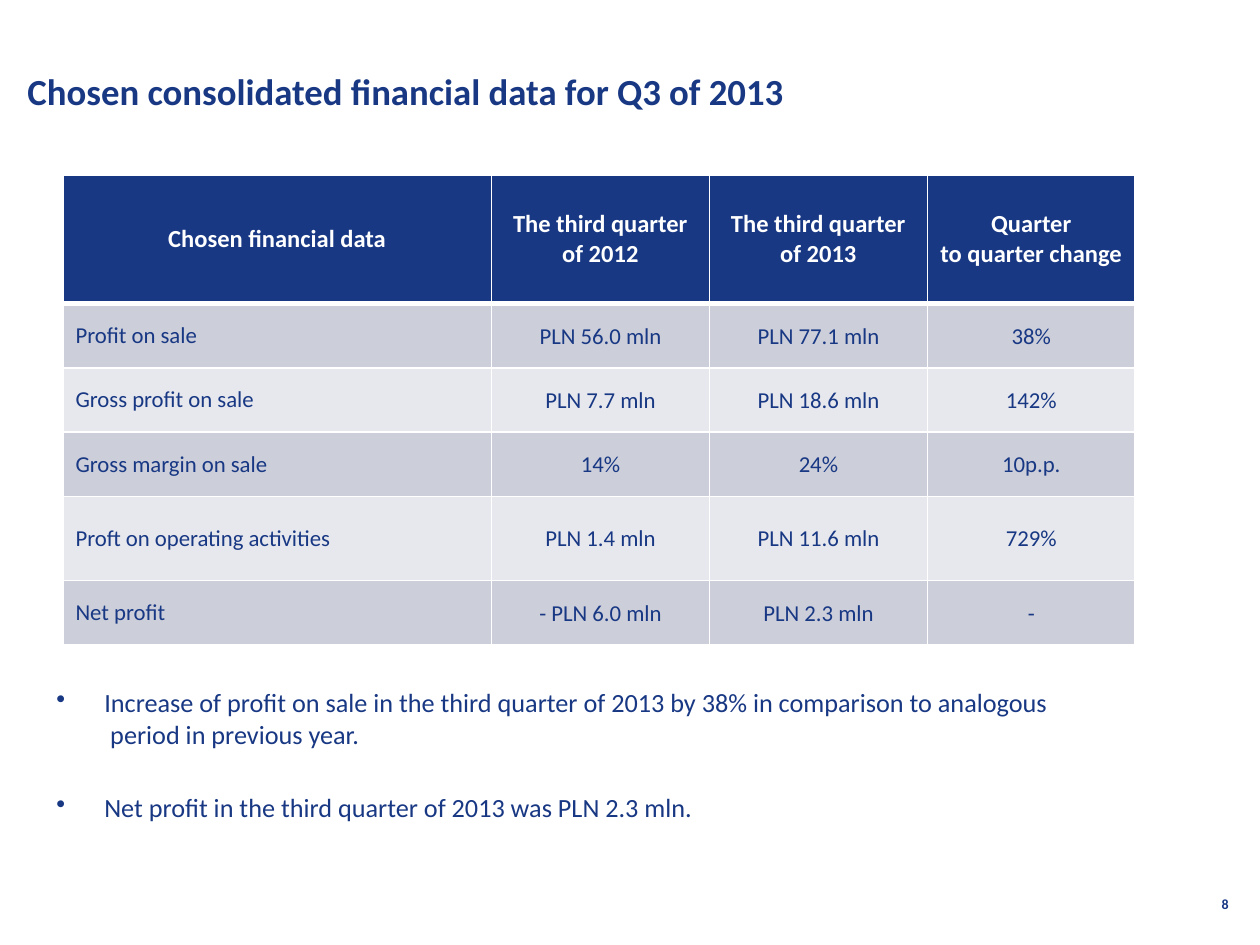
from dataclasses import dataclass

from pptx import Presentation
from pptx.dml.color import RGBColor
from pptx.enum.text import MSO_ANCHOR as Anchor, PP_ALIGN as Align
from pptx.oxml.ns import qn
from pptx.oxml.xmlchemy import OxmlElement as Element
from pptx.util import Inches, Pt


@dataclass(frozen=True)
class Theme:
    """Colours, font and type sizes of the slide."""
    font: str = "Calibri"
    navy: str = "183884"
    white: str = "FFFFFF"
    bands: tuple = ("CCCED9", "E7E8ED")
    title: int = 21
    bullet: int = 15
    header: int = 14
    body: int = 13
    number: int = 8


THEME = Theme()
COLUMNS = (3.4, 1.73, 1.73, 1.65)
ROW_HEIGHTS = (1.02, 0.51, 0.51, 0.51, 0.67, 0.51)
FINANCIALS = (
    ("Chosen financial data", "The third quarter of 2012",
     "The third quarter of 2013", "Quarter\vto quarter change"),
    ("Profit on sale", "PLN 56.0 mln", "PLN 77.1 mln", "38%"),
    ("Gross profit on sale", "PLN 7.7 mln", "PLN 18.6 mln", "142%"),
    ("Gross margin on sale", "14%", "24%", "10p.p."),
    ("Proft on operating activities", "PLN 1.4 mln", "PLN 11.6 mln", "729%"),
    ("Net profit", "- PLN 6.0 mln", "PLN 2.3 mln", "-"),
)
COMMENTS = (
    "Increase of profit on sale in the third quarter of 2013 by 38% "
    "in comparison to analogous\v period in previous year.",
    "Net profit in the third quarter of 2013 was PLN 2.3 mln.",
)


def write(paragraph, text, size, color=THEME.navy, bold=False, align=Align.LEFT):
    """Fill a paragraph and format its runs and line breaks."""
    paragraph.text = text
    paragraph.alignment = align
    for run in paragraph.runs:
        run.font.name = THEME.font
        run.font.size = Pt(size)
        run.font.bold = bold
        run.font.color.rgb = RGBColor.from_string(color)
    for line_break in paragraph._p.findall(qn("a:br")):
        properties = Element("a:rPr")
        properties.set("sz", str(size * 100))
        line_break.append(properties)


def add_frame(slide, box, anchor=Anchor.TOP):
    """Add a wrapping text box and return its text frame."""
    frame = slide.shapes.add_textbox(*map(Inches, box)).text_frame
    frame.word_wrap = True
    frame.vertical_anchor = anchor
    return frame


def add_title(slide, box, text):
    """Place the slide heading."""
    frame = add_frame(slide, box, Anchor.MIDDLE)
    write(frame.paragraphs[0], text, THEME.title, bold=True)


def add_page_number(slide, box, text):
    """Place the page number at the right of its box."""
    frame = add_frame(slide, box)
    write(frame.paragraphs[0], text, THEME.number, bold=True, align=Align.RIGHT)


def set_borders(cell, top, bottom):
    """Draw white cell borders with the given top and bottom widths in points."""
    properties = cell._tc.get_or_add_tcPr()
    widths = {"a:lnL": 1, "a:lnR": 1, "a:lnT": top, "a:lnB": bottom}
    for position, (side, width) in enumerate(widths.items()):
        line, fill, color = map(Element, (side, "a:solidFill", "a:srgbClr"))
        line.set("w", str(Pt(width)))
        color.set("val", THEME.white)
        fill.append(color)
        line.append(fill)
        properties.insert(position, line)


def fill_cell(cell, text, row, column):
    """Write and style one cell according to its place in the table."""
    is_header = row == 0
    is_figure = row > 0 and column > 0
    cell.fill.solid()
    cell.fill.fore_color.rgb = RGBColor.from_string(
        THEME.navy if is_header else THEME.bands[(row - 1) % 2])
    cell.vertical_anchor = Anchor.MIDDLE
    if is_figure:
        cell.margin_left = cell.margin_right = cell.margin_top = Inches(0.01)
        cell.margin_bottom = 0
    write(cell.text_frame.paragraphs[0], text,
          THEME.header if is_header else THEME.body,
          THEME.white if is_header else THEME.navy, is_header,
          Align.CENTER if is_header or is_figure else Align.LEFT)
    set_borders(cell, top=3 if row == 1 else 1, bottom=3 if is_header else 1)


def add_financial_table(slide, box):
    """Place the table of quarterly results."""
    table = slide.shapes.add_table(
        len(FINANCIALS), len(COLUMNS), *map(Inches, box)).table
    for column, width in zip(table.columns, COLUMNS):
        column.width = Inches(width)
    for row, height in zip(table.rows, ROW_HEIGHTS):
        row.height = Inches(height)
    for row, texts in enumerate(FINANCIALS):
        for column, text in enumerate(texts):
            fill_cell(table.cell(row, column), text, row, column)


def add_comments(slide, box):
    """Place the bulleted comments under the table."""
    frame = add_frame(slide, box)
    for index, text in enumerate(COMMENTS):
        paragraph = frame.add_paragraph() if index else frame.paragraphs[0]
        write(paragraph, text, THEME.bullet)
        if index:
            paragraph.space_before = Pt(24)
        properties = paragraph._p.get_or_add_pPr()
        properties.set("marL", str(Inches(0.38)))
        properties.set("indent", str(Inches(-0.38)))
        bullet = Element("a:buChar")
        bullet.set("char", "•")
        properties.append(bullet)


def main():
    """Build and save the slide."""
    deck = Presentation()
    deck.slide_width, deck.slide_height = Inches(10), Inches(7.5)
    slide = deck.slides.add_slide(deck.slide_layouts[6])
    add_page_number(slide, (7.52, 7.06, 2.33, 0.37), "8")
    add_title(slide, (0.12, 0.36, 8.74, 0.72),
              "Chosen consolidated financial data for Q3 of 2013")
    add_comments(slide, (0.35, 5.4, 9, 1.42))
    add_financial_table(slide, (0.5, 1.39, 8.52, 3.74))
    deck.save("out.pptx")


if __name__ == "__main__":
    main()
